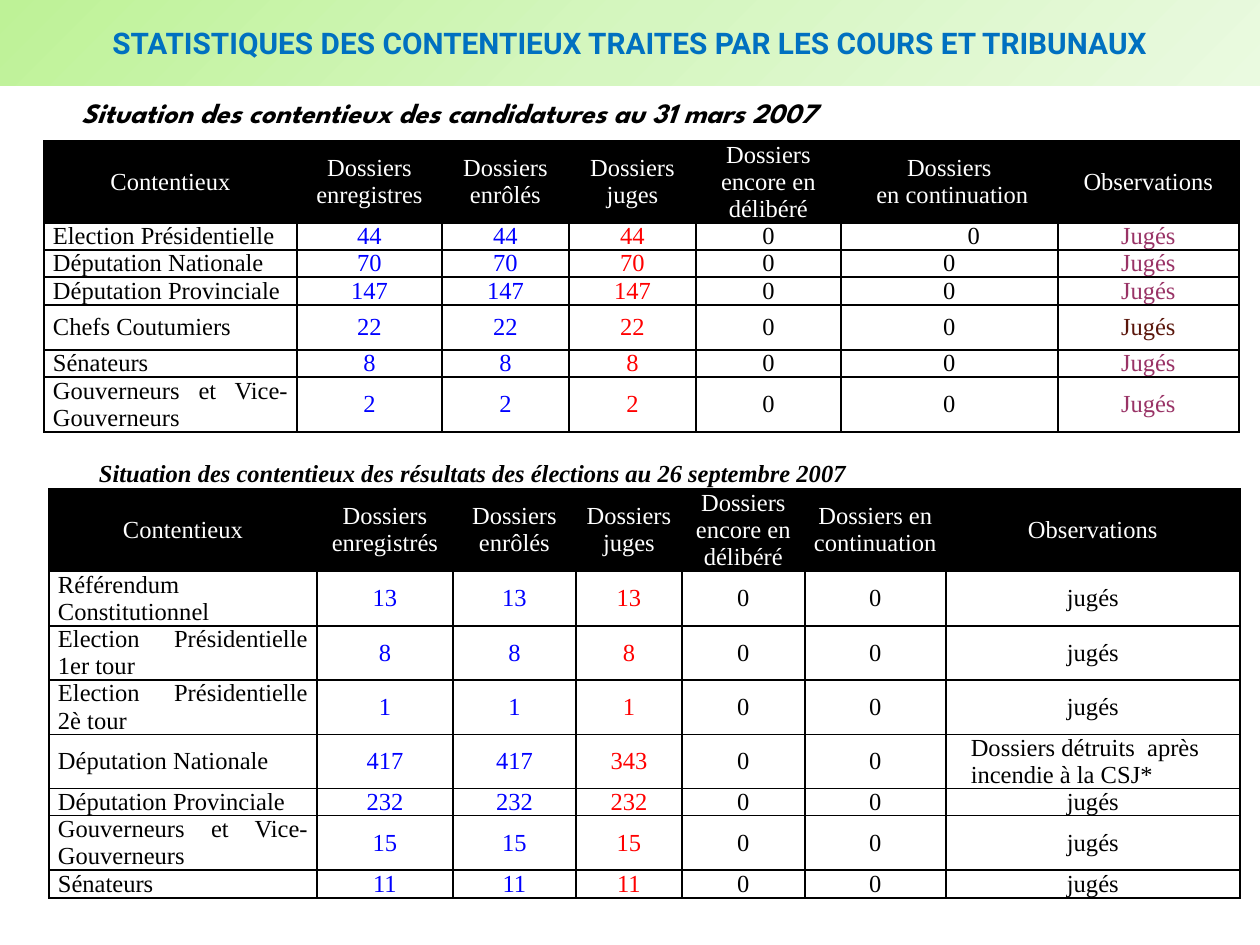
from lxml import etree
from pptx import Presentation
from pptx import util as u
from pptx.dml.color import RGBColor
from pptx.enum import shapes, text
from pptx.oxml import parse_xml
from pptx.oxml.ns import nsdecls, qn


class Theme:
    black, white = "000000", "FFFFFF"
    blue, red, title = "0000FF", "FF0000", "0070C0"
    plum, brown = "993366", "5A160B"
    gradient = [(0, "BEF297"), (50, "D5F6C0"), (100, "EAFAE0")]
    body, heading, caption = "Times New Roman", "Roboto", "League Spartan"
    body_pt, heading_pt, caption_pt = 14, 17, 16


PX = u.Inches(1) // 126
MID, LEFT, CENTER, JUSTIFY = (text.MSO_ANCHOR.MIDDLE, text.PP_ALIGN.LEFT,
                              text.PP_ALIGN.CENTER, text.PP_ALIGN.JUSTIFY)


def add_run(p, words, color, font=Theme.body, size=Theme.body_pt, bold=False, italic=False):
    r = p.add_run()
    r.text = words
    f = r.font
    f.name, f.size, f.bold, f.italic = font, u.Pt(size), bold, italic
    f.color.rgb = RGBColor.from_string(color)


def style_cell(cell, sides, fill=None, inset=9):
    """Set margins, fill and black 1 pt borders on the named sides."""
    cell.margin_left, cell.margin_right = inset * PX, 9 * PX
    cell.margin_top = cell.margin_bottom = 0
    cell.vertical_anchor = MID
    if fill:
        cell.fill.solid()
        cell.fill.fore_color.rgb = RGBColor.from_string(fill)
    else:
        cell.fill.background()
    tc_pr = cell._tc.get_or_add_tcPr()
    for i, side in enumerate(sides):
        tc_pr.insert(i, parse_xml(
            f'<a:ln{side} {nsdecls("a")} w="12700"><a:solidFill>'
            f'<a:srgbClr val="{Theme.black}"/></a:solidFill></a:ln{side}>'))


prs = Presentation()
prs.slide_width, prs.slide_height = 1260 * PX, 945 * PX
s = prs.slides.add_slide(prs.slide_layouts[6])

# Each row: label, registered and enrolled, judged, observation, its colour
candidatures = [
    ("Election Présidentielle", 44, 44, "Jugés", Theme.plum),
    ("Députation Nationale", 70, 70, "Jugés", Theme.plum),
    ("Députation Provinciale", 147, 147, "Jugés", Theme.plum),
    ("Chefs Coutumiers", 22, 22, "Jugés", Theme.brown),
    ("Sénateurs", 8, 8, "Jugés", Theme.plum),
    ("Gouverneurs et Vice-Gouverneurs", 2, 2, "Jugés", Theme.plum),
]
destroyed = "Dossiers détruits  après incendie à la CSJ*"
resultats = [
    ("Référendum Constitutionnel", 13, 13, "jugés", Theme.black),
    ("Election Présidentielle 1er tour", 8, 8, "jugés", Theme.black),
    ("Election Présidentielle 2è tour", 1, 1, "jugés", Theme.black),
    ("Députation Nationale", 417, 343, destroyed, Theme.black),
    ("Députation Provinciale", 232, 232, "jugés", Theme.black),
    ("Gouverneurs et Vice- Gouverneurs", 15, 15, "jugés", Theme.black),
    ("Sénateurs", 11, 11, "jugés", Theme.black),
]
tables = [
    dict(left=44, top=111, caption="", rows=candidatures,
         registered="Dossiers enregistres", pending="Dossiers\n en continuation",
         widths=[253, 145, 127, 127, 145, 217, 181],
         heights=[27, 82, 27, 27, 28, 45, 27, 55]),
    dict(left=49, top=459, rows=resultats,
         caption="Situation des contentieux des résultats des élections au 26 septembre 2007",
         registered="Dossiers enregistrés", pending="Dossiers en continuation",
         widths=[268, 136, 123, 106, 123, 141, 294],
         heights=[30, 82, 55, 54, 54, 54, 27, 54, 28]),
]

for t in tables:
    widths, heights = t["widths"], t["heights"]
    frame = s.shapes.add_table(len(heights), len(widths), t["left"] * PX, t["top"] * PX,
                               sum(widths) * PX, sum(heights) * PX)
    table = frame.table
    table.first_row = table.horz_banding = False
    for column, width in zip(table.columns, widths):
        column.width = width * PX
    for row, height in zip(table.rows, heights):
        row.height = height * PX

    for cell in table.rows[0].cells:
        style_cell(cell, "B", inset=50)
    table.cell(0, 0).merge(table.cell(0, len(widths) - 1))
    p = table.cell(0, 0).text_frame.paragraphs[0]
    if t["caption"]:
        add_run(p, t["caption"], Theme.black, bold=True, italic=True)
    else:
        etree.SubElement(p._p, qn("a:endParaRPr")).set("sz", str(Theme.body_pt * 100))

    header = ["Contentieux", t["registered"], "Dossiers enrôlés", "Dossiers juges",
              "Dossiers encore en délibéré", t["pending"], "Observations"]
    for cell, words in zip(table.rows[1].cells, header):
        style_cell(cell, "LRTB", Theme.black)
        tf = cell.text_frame
        for i, line in enumerate(words.split("\n")):
            p = tf.add_paragraph() if i else tf.paragraphs[0]
            p.alignment = CENTER
            add_run(p, line, Theme.white)

    for y, (label, registered, judged, note, note_color) in enumerate(t["rows"], 2):
        values = [label, registered, registered, judged, 0, 0, note]
        colors = [Theme.black, Theme.blue, Theme.blue, Theme.red,
                  Theme.black, Theme.black, note_color]
        for x, (value, color) in enumerate(zip(values, colors)):
            cell = table.cell(y, x)
            inset, align = 9, JUSTIFY if x == 0 else CENTER
            if value == destroyed:
                inset, align = 25, LEFT
            elif t["rows"] is candidatures and (y, x) == (2, 5):
                inset = 58  # this zero sits right of its column's centre
            style_cell(cell, "LRTB", inset=inset)
            p = cell.text_frame.paragraphs[0]
            p.alignment = align
            add_run(p, str(value), color)

caption = s.shapes.add_textbox(69 * PX, 74 * PX, 897 * PX, 93 * PX)
tf = caption.text_frame
tf.word_wrap, tf.vertical_anchor = True, MID
tf.margin_top, tf.margin_bottom = 6 * PX, 23 * PX
add_run(tf.paragraphs[0], "Situation des contentieux des candidatures au 31 mars 2007",
        Theme.black, Theme.caption, Theme.caption_pt, True, True)

banner = s.shapes.add_shape(shapes.MSO_SHAPE.RECTANGLE, 0, 0, 1260 * PX, 86 * PX)
banner.shadow.inherit = False
banner.line.fill.background()
stops = "".join(f'<a:gs pos="{pos * 1000}"><a:srgbClr val="{color}"/></a:gs>'
                for pos, color in Theme.gradient)
banner._element.spPr.find(qn("a:prstGeom")).addnext(parse_xml(
    f'<a:gradFill {nsdecls("a")} rotWithShape="1"><a:gsLst>{stops}</a:gsLst>'
    '<a:path path="circle"><a:fillToRect r="100000" b="100000"/></a:path></a:gradFill>'))
tf = banner.text_frame
tf.word_wrap, tf.vertical_anchor = True, MID
p = tf.paragraphs[0]
p.alignment = CENTER
add_run(p, "STATISTIQUES DES CONTENTIEUX TRAITES PAR LES COURS ET TRIBUNAUX",
        Theme.title, Theme.heading, Theme.heading_pt, True)

prs.save("out.pptx")
